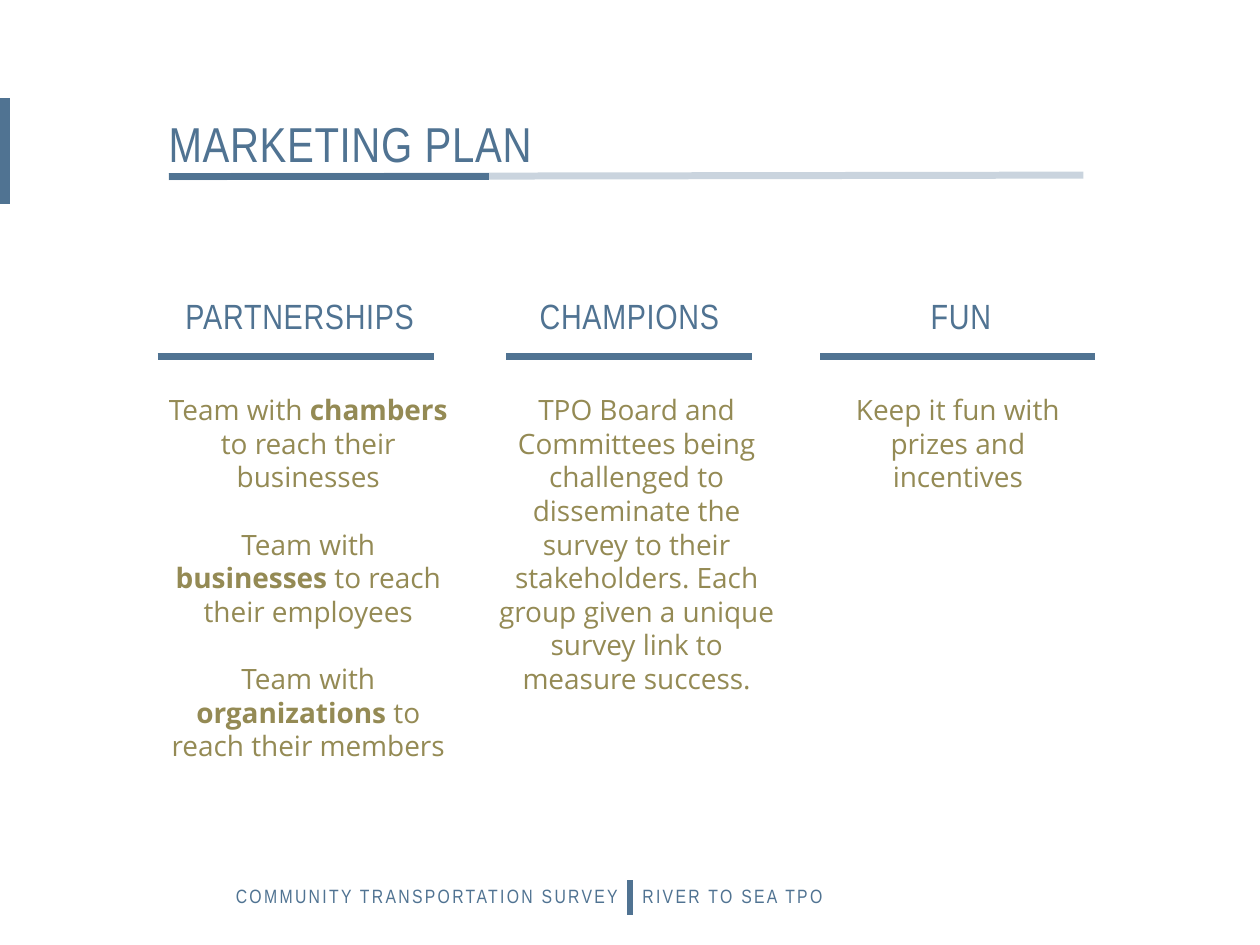
from lxml import etree
from pptx import Presentation
from pptx.dml.color import RGBColor
from pptx.enum import shapes, text
from pptx.oxml.ns import qn
from pptx.util import Cm, Pt

BLUE = RGBColor(0x50, 0x73, 0x92)
OLIVE = RGBColor(0x94, 0x8A, 0x54)
LEFT, MID, RIGHT = text.PP_ALIGN.LEFT, text.PP_ALIGN.CENTER, text.PP_ALIGN.RIGHT
HEAD, BODY = "Arial Narrow", "Open Sans"


def add_text(slide, box, paras, size, align=LEFT, face=HEAD, color=BLUE,
             track=0, gap=0):
    """Each paragraph is a list of strings; every second one is bold."""
    frame = slide.shapes.add_textbox(*map(Cm, box)).text_frame
    frame.word_wrap = True
    frame.auto_size = text.MSO_AUTO_SIZE.SHAPE_TO_FIT_TEXT
    frame.margin_left = frame.margin_right = Cm(0.1)
    frame.margin_top = frame.margin_bottom = Cm(0.05)
    for i, parts in enumerate(paras):
        para = frame.add_paragraph() if i else frame.paragraphs[0]
        para.alignment = align
        para.space_before = Pt(gap if i else 0)
        font = para.font
        font.name, font.size, font.color.rgb = face, Pt(size), color
        for j, part in enumerate(parts):
            run = para.add_run()
            run.text = part
            if j % 2:
                run.font.bold = True
            if track:
                run._r.get_or_add_rPr().set("spc", str(track))


def add_rule(slide, x1, y1, x2, y2, alpha=None):
    rule = slide.shapes.add_connector(
        shapes.MSO_CONNECTOR.STRAIGHT, Cm(x1), Cm(y1), Cm(x2), Cm(y2))
    rule.line.color.rgb = BLUE
    rule.line.width = Pt(4)
    props = rule._element.spPr
    if alpha:
        tint = props.find(".//" + qn("a:srgbClr"))
        etree.SubElement(tint, qn("a:alpha")).set("val", str(alpha * 1000))
    etree.SubElement(props, qn("a:effectLst"))


def add_title(slide, x, y, w, title):
    # Tab on the slide's edge
    tab = slide.shapes.add_shape(
        shapes.MSO_SHAPE.RECTANGLE, 0, Cm(y - 0.26), Cm(0.2), Cm(2.13))
    tab.shadow.inherit = False
    tab.fill.solid()
    tab.fill.fore_color.rgb = BLUE
    tab.line.fill.background()
    # Title over a pale rule with a dark start
    add_text(slide, (x, y, 14.02, 1.3), [[title]], 28, track=40)
    add_rule(slide, x + 0.1, y + 1.32, x + w, y + 1.29, alpha=30)
    add_rule(slide, x + 0.1, y + 1.32, x + 6.56, y + 1.32)


def add_column(slide, y, name, head, rule, body, paras):
    """head, rule and body are (left, width) pairs below the top y."""
    add_text(slide, (head[0], y, head[1], 0.97), [[name]], 20, MID, track=40)
    add_rule(slide, rule[0], y + 1.29, sum(rule), y + 1.29)
    add_text(slide, (body[0], y + 1.98, body[1], 5.59), paras, 16, MID,
             BODY, OLIVE, gap=19.2)


def add_footer(slide, x, y, left, right):
    """x is the place of the divider."""
    add_text(slide, (x - 8.46, y, 8.33, 0.58), [[left]], 11, RIGHT, track=130)
    add_rule(slide, x, y + 0.66, x, y - 0.05)
    add_text(slide, (x + 0.15, y, 8.03, 0.58), [[right]], 11, track=130)


COLUMNS = [
    ("PARTNERSHIPS", (3.1, 5.89), (3.18, 5.56), (3.18, 6.07), [
        ["Team with ", "chambers", " to reach their businesses"],
        ["Team with ", "businesses", " to reach their employees"],
        ["Team with ", "organizations", " to reach their members"]]),
    ("CHAMPIONS", (9.5, 6.38), (10.21, 4.95), (9.8, 6.07), [
        ["TPO Board and Committees being challenged to disseminate the "
         "survey to their stakeholders. Each group given a unique survey "
         "link to measure success."]]),
    ("FUN", (16.54, 5.66), (16.54, 5.54), (16.54, 5.54), [
        ["Keep it fun with prizes and incentives"]]),
]


def main():
    deck = Presentation()
    deck.slide_width, deck.slide_height = Cm(25.4), Cm(19.05)
    slide = deck.slides.add_slide(deck.slide_layouts[6])
    add_title(slide, 3.3, 2.24, 18.54, "MARKETING PLAN")
    for column in COLUMNS:
        add_column(slide, 5.89, *column)
    add_footer(slide, 12.7, 17.78, "COMMUNITY TRANSPORTATION SURVEY",
               "RIVER TO SEA TPO")
    deck.save("out.pptx")


if __name__ == "__main__":
    main()
